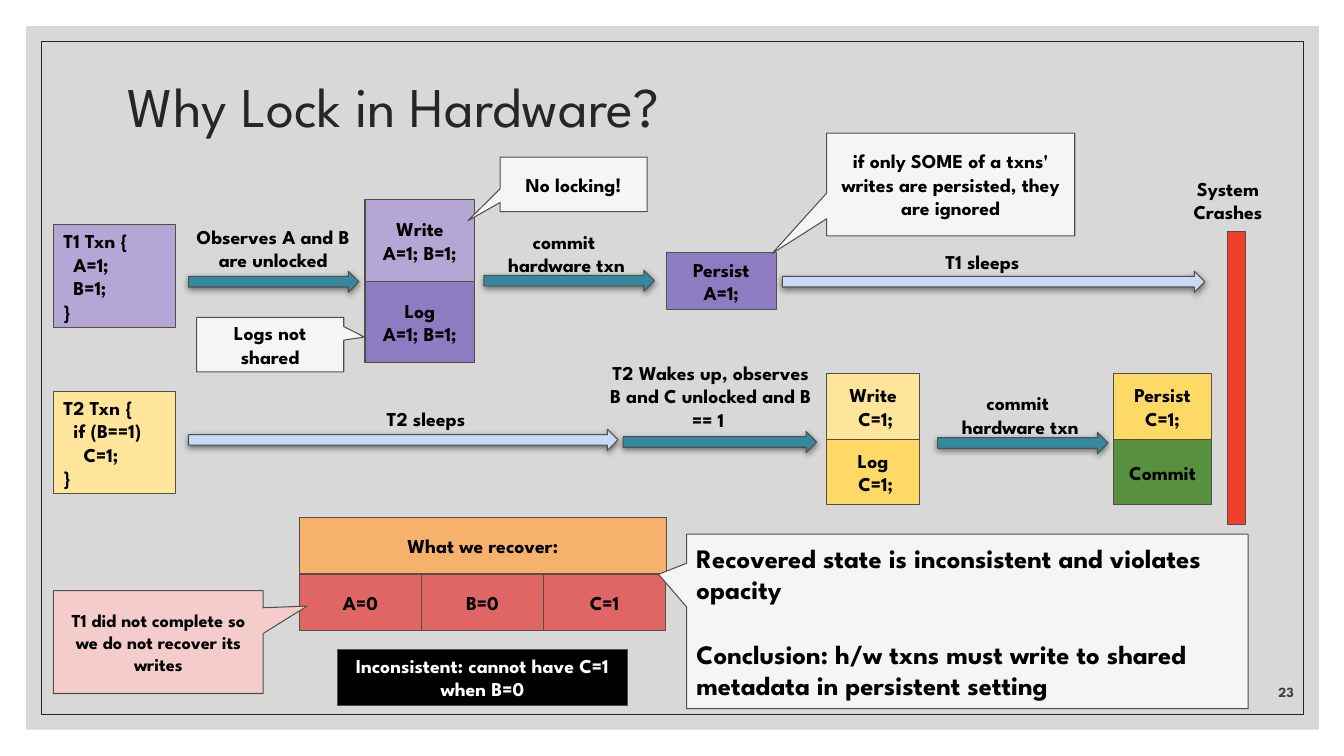
from dataclasses import dataclass

from lxml.etree import SubElement
from pptx import Presentation
from pptx.dml.color import RGBColor
from pptx.enum.shapes import MSO_SHAPE
from pptx.enum.text import MSO_ANCHOR, PP_ALIGN
from pptx.oxml.ns import qn
from pptx.util import Pt

PX = 9144  # EMU; 100 px to the inch


@dataclass(frozen=True)
class Theme:
    font: str = "League Spartan"
    title_size: int = 40
    conclusion_size: int = 19
    body_size: int = 14
    note_size: int = 13
    number_size: int = 10
    ink: str = "000000"
    inverse: str = "FFFFFF"
    title: str = "262626"
    number: str = "3F3F3F"
    outline: str = "505046"
    panel: str = "BFBFBF"
    note: str = "F5F6F4"
    warning: str = "F4CCCC"
    lilac: str = "B4A7D6"
    purple: str = "8E7CC3"
    cream: str = "FFE599"
    yellow: str = "FFD966"
    green: str = "57903F"
    orange: str = "F6B26B"
    rose: str = "E06666"
    crash: str = "F03F2B"
    active: str = "3488A0"
    asleep: str = "C9DAF8"


THEME = Theme()


@dataclass(frozen=True)
class Box:
    left: int
    top: int
    width: int
    height: int

    def inner(self, x, y, width, height):
        """Return a box offset from this box's top left corner."""
        return Box(self.left + x, self.top + y, width, height)

    def emu(self):
        return [length * PX for length in (self.left, self.top, self.width, self.height)]


def write(shape, lines, size=THEME.body_size, color=THEME.ink, align=PP_ALIGN.CENTER,
          anchor=MSO_ANCHOR.MIDDLE, bold=True, margin=10):
    frame = shape.text_frame
    frame.word_wrap = True
    frame.vertical_anchor = anchor
    frame.margin_left = frame.margin_right = 10 * PX
    frame.margin_top = frame.margin_bottom = margin * PX
    frame.text = lines
    for paragraph in frame.paragraphs:
        paragraph.alignment = align
        for run in paragraph.runs:
            run.font.name = THEME.font
            run.font.size = Pt(size)
            run.font.bold = bold
            run.font.color.rgb = RGBColor.from_string(color)
    return frame.paragraphs


def add_text(slide, box, lines, **style):
    return write(slide.shapes.add_textbox(*box.emu()), lines, **style)


def add_block(slide, box, fill, lines="", kind=MSO_SHAPE.RECTANGLE, **style):
    shape = slide.shapes.add_shape(kind, *box.emu())
    shape.shadow.inherit = False
    shape.fill.solid()
    shape.fill.fore_color.rgb = RGBColor.from_string(fill)
    shape.line.color.rgb = RGBColor.from_string(THEME.outline)
    shape.line.width = Pt(0.75)
    if lines:
        write(shape, lines, **style)
    return shape


def add_callout(slide, box, tip, lines, fill=THEME.note, **style):
    """Add a callout; tip is its point as shares of the size from the centre."""
    shape = add_block(slide, box, fill, lines, MSO_SHAPE.RECTANGULAR_CALLOUT, **style)
    shape.adjustments[0], shape.adjustments[1] = tip
    return shape


def add_alpha(color_element, percent):
    SubElement(color_element, qn("a:alpha")).set("val", str(percent * 1000))


def add_step(slide, arrow_box, fill, label_box, label):
    """Add a shadowed arrow with its label."""
    arrow = add_block(slide, arrow_box, fill, kind=MSO_SHAPE.RIGHT_ARROW)
    effects = arrow._element.spPr.find(qn("a:effectLst"))
    shadow = SubElement(effects, qn("a:outerShdw"), blurRad=str(Pt(4.5)),
                        dist=str(Pt(1.5)), dir="5400000", rotWithShape="0")
    add_alpha(SubElement(shadow, qn("a:srgbClr"), val=THEME.ink), 50)
    add_text(slide, label_box, label, anchor=MSO_ANCHOR.TOP)


def add_stack(slide, box, cells):
    height = box.height // len(cells)
    for row, (fill, lines) in enumerate(cells):
        add_block(slide, box.inner(0, row * height, box.width, height), fill, lines)


def add_program(slide, box, fill, lines, indents):
    shape = add_block(slide, box, fill, lines, align=PP_ALIGN.LEFT)
    for paragraph, indent in zip(shape.text_frame.paragraphs, indents):
        paragraph._p.get_or_add_pPr().set("marL", str(indent * PX))


def draw_frame(slide, box):
    panel = add_block(slide, box.inner(26, 26, 1282, 698), THEME.panel)
    panel.line.fill.background()
    add_alpha(panel._element.spPr.find(qn("a:solidFill"))[0], 60)
    border = add_block(slide, box.inner(41, 41, 1252, 668), THEME.panel)
    border.fill.background()
    border.line.color.rgb = RGBColor.from_string(THEME.title)
    title = add_text(slide, box.inner(117, 70, 1100, 77), "Why Lock in Hardware?",
                     size=THEME.title_size, color=THEME.title, align=PP_ALIGN.LEFT,
                     bold=False, margin=5)
    title[0].line_spacing = 0.9
    add_text(slide, box.inner(1201, 660, 92, 40), "23", size=THEME.number_size,
             color=THEME.number, align=PP_ALIGN.RIGHT, anchor=MSO_ANCHOR.BOTTOM, margin=5)


def draw_first_transaction(slide, box):
    add_program(slide, box.inner(0, 91, 121, 102), THEME.lilac,
                "T1 Txn {\nA=1;\nB=1;\n}", (0, 10, 10, 0))
    add_step(slide, box.inner(134, 137, 169, 21), THEME.active,
             box.inner(127, 81, 182, 65), "Observes A and B are unlocked")
    add_stack(slide, box.inner(309, 66, 109, 162),
              [(THEME.lilac, "Write\nA=1; B=1;"), (THEME.purple, "Log\nA=1; B=1;")])
    add_step(slide, box.inner(427, 136, 169, 21), THEME.active,
             box.inner(418, 86, 182, 65), "commit \nhardware txn")
    add_block(slide, box.inner(608, 119, 109, 56), THEME.purple, "Persist\nA=1;")
    add_step(slide, box.inner(723, 137, 419, 21), THEME.asleep,
             box.inner(793, 106, 257, 40), "T1 sleeps")
    add_callout(slide, box.inner(443, 24, 146, 54), (-0.72, 0.67), "No locking!")
    add_callout(slide, box.inner(767, 0, 246, 102), (-0.72, 0.67),
                "if only SOME of a txns' writes are persisted, they are ignored")
    add_callout(slide, box.inner(142, 183, 146, 54), (0.64, -0.14), "Logs not shared")


def draw_second_transaction(slide, box):
    add_program(slide, box.inner(0, 40, 121, 102), THEME.cream,
                "T2 Txn {\nif (B==1)\nC=1;\n}", (0, 10, 20, 0))
    add_step(slide, box.inner(134, 78, 426, 21), THEME.asleep,
             box.inner(241, 46, 257, 40), "T2 sleeps")
    add_step(slide, box.inner(565, 80, 192, 21), THEME.active, box.inner(538, 0, 228, 94),
             "T2 Wakes up, observes B and C unlocked and B == 1 ")
    add_stack(slide, box.inner(767, 23, 92, 131),
              [(THEME.cream, "Write\n C=1;"), (THEME.yellow, "Log\n C=1;")])
    add_step(slide, box.inner(877, 81, 169, 21), THEME.active,
             box.inner(868, 30, 182, 65), "commit \nhardware txn")
    add_stack(slide, box.inner(1051, 23, 98, 131),
              [(THEME.yellow, "Persist C=1;"), (THEME.green, "Commit")])


def draw_crash(slide, box):
    add_block(slide, box.inner(66, 65, 18, box.height - 65), THEME.crash)
    add_text(slide, box.inner(0, 0, box.width, 65), "System Crashes", anchor=MSO_ANCHOR.TOP)


def draw_recovery(slide, box):
    add_block(slide, box.inner(244, 0, 364, 56), THEME.orange, "What we recover:")
    for column, value in enumerate(("A=0", "B=0", "C=1")):
        add_block(slide, box.inner(244 + 121 * column, 57, 121, 56), THEME.rose, value)
    add_callout(slide, box.inner(0, 73, 208, 102), (0.71, -0.35),
                "T1 did not complete so we do not recover its writes",
                fill=THEME.warning, size=THEME.note_size)
    conclusion = add_callout(
        slide, box.inner(628, 17, 557, 173), (-0.55, -0.27),
        "Recovered state is inconsistent and violates opacity\n"
        "Conclusion: h/w txns must write to shared metadata in persistent setting",
        size=THEME.conclusion_size, align=PP_ALIGN.LEFT)
    conclusion.text_frame.paragraphs[1].space_before = Pt(23)
    add_block(slide, box.inner(282, 131, 287, 56), THEME.ink,
              "Inconsistent: cannot have C=1 when B=0", color=THEME.inverse)


def main():
    presentation = Presentation()
    presentation.slide_width, presentation.slide_height = 1333 * PX, 750 * PX
    slide = presentation.slides.add_slide(presentation.slide_layouts[6])
    draw_frame(slide, Box(0, 0, 1333, 750))
    draw_first_transaction(slide, Box(53, 132, 1142, 237))
    draw_second_transaction(slide, Box(53, 348, 1149, 154))
    draw_crash(slide, Box(1151, 165, 134, 355))
    draw_recovery(slide, Box(53, 513, 1185, 190))
    presentation.save("out.pptx")


if __name__ == "__main__":
    main()
